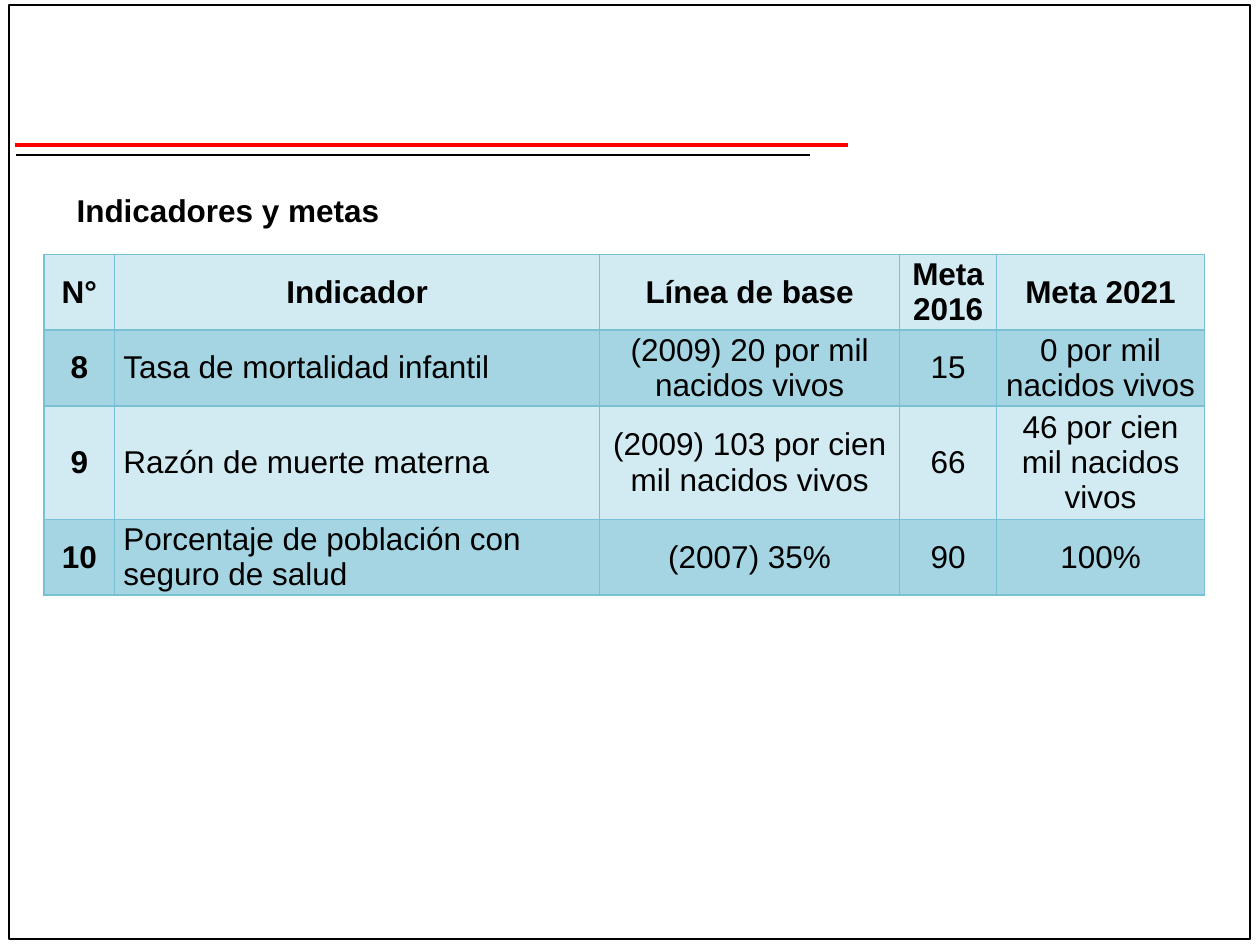
from lxml.etree import SubElement
from pptx import Presentation
from pptx.dml.color import RGBColor
from pptx.enum.shapes import MSO_CONNECTOR, MSO_SHAPE
from pptx.enum.text import MSO_ANCHOR, MSO_AUTO_SIZE, PP_ALIGN
from pptx.oxml.ns import qn
from pptx.util import Inches, Pt

BLACK = RGBColor(0x00, 0x00, 0x00)
RED = RGBColor(0xFF, 0x00, 0x00)
BORDER_BLUE = RGBColor(0x78, 0xC0, 0xD4)
LIGHT_BLUE = RGBColor(0xD2, 0xEA, 0xF1)
MEDIUM_BLUE = RGBColor(0xA5, 0xD5, 0xE2)

GRID_COLUMNS, GRID_ROWS = 100, 75
COLUMN_SPANS = [5.6, 38.5, 23.8, 7.7, 16.5]
ROW_SPANS = [6, 6, 9, 6]
INDICATORS = [
    ["N°", "Indicador", "Línea de base", "Meta 2016", "Meta 2021"],
    ["8", "Tasa de mortalidad infantil", "(2009) 20 por mil nacidos vivos",
     "15", "0 por mil nacidos vivos"],
    ["9", "Razón de muerte materna", "(2009) 103 por cien mil nacidos vivos",
     "66", "46 por cien mil nacidos vivos"],
    ["10", "Porcentaje de población con seguro de salud", "(2007) 35%",
     "90", "100%"],
]


class SlideBuilder:
    """Places elements on a slide; every length is in grid columns or rows."""

    def __init__(self, presentation):
        self.column = presentation.slide_width / GRID_COLUMNS
        self.row = presentation.slide_height / GRID_ROWS
        self.font_format = {"name": "Arial", "size": Pt(18)}
        self.slide = presentation.slides.add_slide(presentation.slide_layouts[6])

    def place(self, *lengths):
        """Turn alternating column and row counts into slide lengths."""
        units = (self.column, self.row)
        return [round(length * units[i % 2]) for i, length in enumerate(lengths)]

    def add_text(self, paragraph, text, bold, alignment):
        paragraph.alignment = alignment
        run = paragraph.add_run()
        run.text = text
        for name, value in {**self.font_format, "bold": bold}.items():
            setattr(run.font, name, value)
        run.font.color.rgb = BLACK

    def frame(self, left, top, width, height):
        shape = self.slide.shapes.add_shape(
            MSO_SHAPE.RECTANGLE, *self.place(left, top, width, height))
        shape.shadow.inherit = False
        shape.fill.background()
        shape.line.color.rgb = BLACK
        shape.line.width = Pt(1)

    def rule(self, left, right, top, color, weight):
        connector = self.slide.shapes.add_connector(
            MSO_CONNECTOR.STRAIGHT, *self.place(left, top, right, top))
        connector.line.color.rgb = color
        connector.line.width = Pt(weight)
        SubElement(connector._element.spPr, qn("a:effectLst"))

    def heading(self, text, left, top, width, height):
        box = self.slide.shapes.add_textbox(*self.place(left, top, width, height))
        box.text_frame.word_wrap = False
        box.text_frame.auto_size = MSO_AUTO_SIZE.SHAPE_TO_FIT_TEXT
        self.add_text(box.text_frame.paragraphs[0], text, True, PP_ALIGN.LEFT)

    def border(self, cell):
        properties = cell._tc.get_or_add_tcPr()
        for position, side in enumerate(("lnL", "lnR", "lnT", "lnB")):
            line = SubElement(properties, qn(f"a:{side}"), w=str(Pt(1)))
            fill = SubElement(line, qn("a:solidFill"))
            SubElement(fill, qn("a:srgbClr"), val=str(BORDER_BLUE))
            properties.insert(position, line)

    def cell(self, cell, text, color, bold, alignment):
        cell_format = {
            "vertical_anchor": MSO_ANCHOR.MIDDLE,
            "margin_left": Inches(0.07), "margin_right": Inches(0.07),
            "margin_top": 0, "margin_bottom": 0,
        }
        for name, value in cell_format.items():
            setattr(cell, name, value)
        cell.fill.solid()
        cell.fill.fore_color.rgb = color
        self.border(cell)
        self.add_text(cell.text_frame.paragraphs[0], text, bold, alignment)

    def table(self, rows, left, top, column_spans, row_spans):
        table = self.slide.shapes.add_table(
            len(rows), len(column_spans),
            *self.place(left, top, sum(column_spans), sum(row_spans))).table
        table.first_row = table.horz_banding = False
        for column, span in zip(table.columns, column_spans):
            column.width = round(span * self.column)
        for row, span in zip(table.rows, row_spans):
            row.height = round(span * self.row)
        for i, texts in enumerate(rows):
            color = MEDIUM_BLUE if i % 2 else LIGHT_BLUE
            for j, text in enumerate(texts):
                is_name = i > 0 and j == 1
                self.cell(table.cell(i, j), text, color, i == 0 or j == 0,
                          PP_ALIGN.LEFT if is_name else PP_ALIGN.CENTER)


def main():
    presentation = Presentation()
    presentation.slide_width = Inches(10)
    presentation.slide_height = Inches(7.5)
    builder = SlideBuilder(presentation)
    builder.frame(0.7, 0.4, 98.5, 74.1)
    builder.rule(1.2, 67.3, 11.5, RED, 2.25)
    builder.rule(1.3, 64.3, 12.3, BLACK, 1)
    builder.heading("Indicadores y metas", 5.1, 14.7, 26.3, 4)
    builder.table(INDICATORS, 3.5, 20.2, COLUMN_SPANS, ROW_SPANS)
    presentation.save("out.pptx")


if __name__ == "__main__":
    main()
